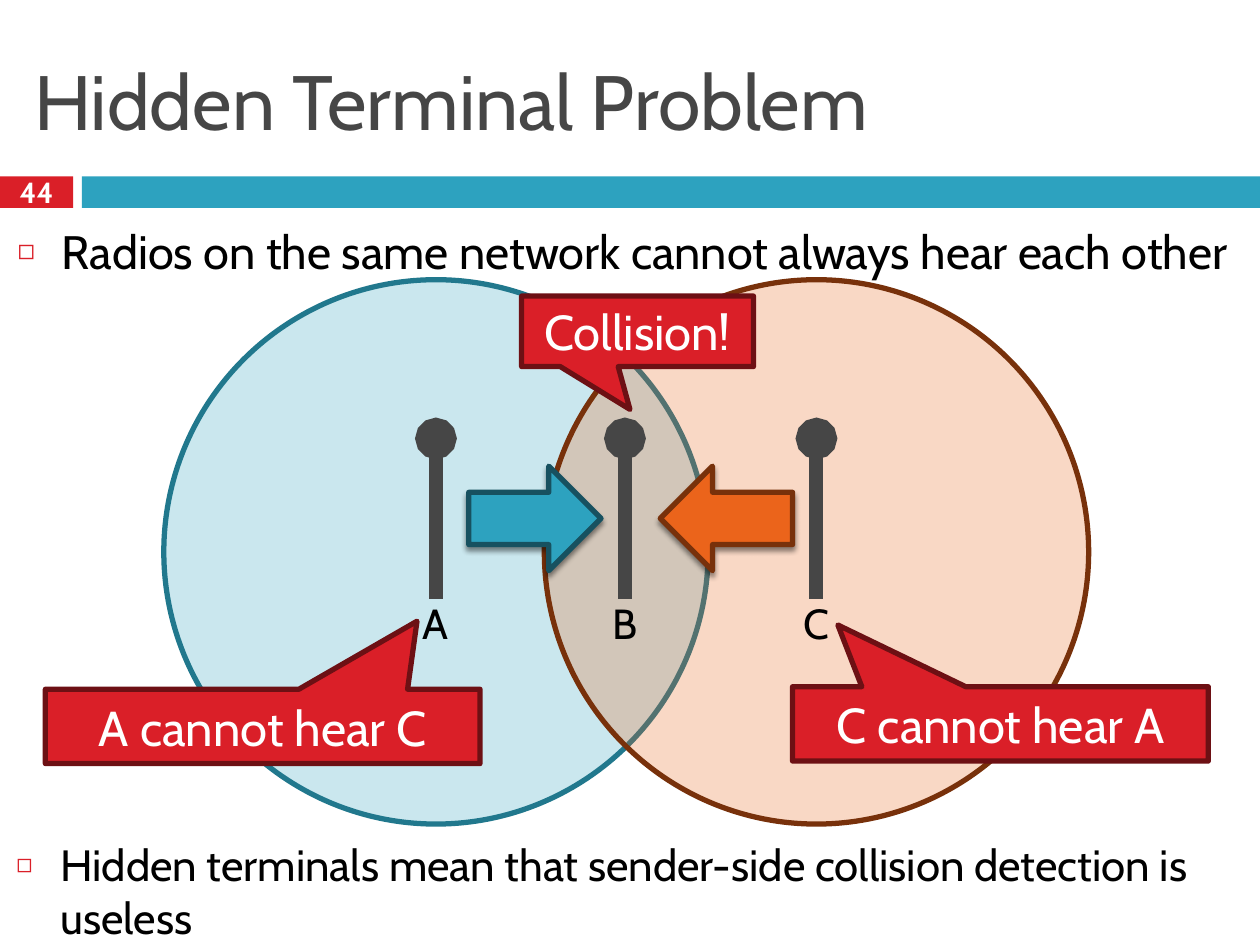
from lxml.etree import SubElement
from pptx import Presentation
from pptx.dml.color import RGBColor
from pptx.enum.shapes import MSO_CONNECTOR, MSO_SHAPE
from pptx.enum.text import MSO_ANCHOR, MSO_AUTO_SIZE, PP_ALIGN
from pptx.oxml.ns import qn
from pptx.util import Inches, Pt

FONT = "Cabin"
HUES = {
    "red": "DA1F28", "maroon": "6D1014", "teal": "2DA2BF", "sea": "21788D",
    "deep": "175160", "orange": "EB641B", "brown": "78310B",
    "gray": "464646", "black": "000000", "white": "FFFFFF",
}


def rgb(hue):
    return RGBColor.from_string(HUES[hue])


def node(parent, tag, **attrs):
    return SubElement(parent, qn(tag), {k: str(v) for k, v in attrs.items()})


def place(item, box):
    item.left, item.top, item.width, item.height = map(Inches, box)


def write(item, text, size=28, hue="white", bold=False,
          align=PP_ALIGN.CENTER, anchor=MSO_ANCHOR.MIDDLE, wrap=True):
    frame = item.text_frame
    frame.auto_size = MSO_AUTO_SIZE.NONE
    frame.word_wrap = wrap
    frame.vertical_anchor = anchor
    para = frame.paragraphs[0]
    para.alignment = align
    run = para.add_run()
    run.text = text
    font = run.font
    font.name, font.size, font.bold = FONT, Pt(size), bold
    font.color.rgb = rgb(hue)
    return para


def draw(slide, kind, box, fill, edge=None, alpha=None):
    item = slide.shapes.add_shape(kind, *map(Inches, box))
    item.shadow.inherit = False
    item.fill.solid()
    item.fill.fore_color.rgb = rgb(fill)
    if alpha:
        tint = item._element.spPr.find(qn("a:solidFill"))[0]
        node(tint, "a:alpha", val=alpha * 1000)
    if edge:
        item.line.color.rgb = rgb(edge)
        item.line.width = Pt(3)
    else:
        item.line.fill.background()
    return item


def header(slide, box, title, number):
    left, top, width, height = box
    tab, gap = 0.58, 0.07
    page = draw(slide, MSO_SHAPE.RECTANGLE, (left, top, tab, height), "red")
    page.text_frame.margin_top = page.text_frame.margin_bottom = 0
    write(page, number, size=16.6, bold=True)
    draw(slide, MSO_SHAPE.RECTANGLE,
         (left + tab + gap, top, width - tab - gap, height), "teal")
    head = slide.shapes.title
    place(head, (0.17, 0.25, 9.67, 1.08))
    write(head, title, size=44, hue="gray", align=PP_ALIGN.LEFT)


def bullet(holder, box, text, size):
    place(holder, box)
    para = write(holder, text, size=size, hue="black",
                 align=PP_ALIGN.LEFT, anchor=MSO_ANCHOR.TOP)
    para.space_before = Pt(7)
    props = para._p.get_or_add_pPr()
    props.set("marL", str(Inches(0.35)))
    props.set("indent", str(-Inches(0.35)))
    node(node(props, "a:buClr"), "a:srgbClr", val=HUES["red"])
    node(props, "a:buSzPct", val=60000)
    node(props, "a:buChar", char="◻")


def radio(slide, box, name):
    left, top, width, height = box
    mid = Inches(left + width / 2)
    mast = slide.shapes.add_connector(
        MSO_CONNECTOR.STRAIGHT, mid, Inches(top), mid, Inches(top + height))
    mast.line.color.rgb = rgb("gray")
    mast.line.width = Pt(8)
    node(mast.line._get_or_add_ln(), "a:headEnd", type="oval")
    node(mast._element.spPr, "a:effectLst")
    label = slide.shapes.add_textbox(
        *map(Inches, (left, top + height - 0.06, width, 0.5)))
    write(label, name, size=24, hue="black", anchor=MSO_ANCHOR.TOP, wrap=False)


def signal(slide, kind, box, fill, edge):
    arrow = draw(slide, kind, box, fill, edge)
    glow = node(arrow._element.spPr.find(qn("a:effectLst")), "a:outerShdw",
                blurRad=Pt(3), dist=Pt(2.4), dir=5400000, rotWithShape=0)
    node(node(glow, "a:srgbClr", val=HUES["black"]), "a:alpha", val=45000)


def callout(slide, box, text, tip):
    """Draw a callout whose point lies at tip, in inches."""
    left, top, width, height = box
    item = draw(slide, MSO_SHAPE.RECTANGULAR_CALLOUT, box, "red", "maroon")
    item.adjustments[0] = (tip[0] - left) / width - 0.5
    item.adjustments[1] = (tip[1] - top) / height - 0.5
    write(item, text)


def diagram(slide, box):
    left, top, width, size = box
    # Radio ranges
    for x, fill, edge in ((left, "teal", "sea"),
                          (left + width - size, "orange", "brown")):
        draw(slide, MSO_SHAPE.OVAL, (x, top, size, size), fill, edge, alpha=25)
    # Radios: A and C at the centres of their ranges
    mids = (left + size / 2, 4.96, left + width - size / 2)
    for name, mid in zip("ABC", mids):
        radio(slide, (mid - 0.2, top + 1.26, 0.4, 1.27), name)
    # Signals towards B
    for kind, x, fill, edge in (
            (MSO_SHAPE.RIGHT_ARROW, 3.72, "teal", "deep"),
            (MSO_SHAPE.LEFT_ARROW, 5.24, "orange", "brown")):
        signal(slide, kind, (x, top + 1.48, 1.05, 0.83), fill, edge)
    # Remarks
    callout(slide, (4.14, 2.35, 1.84, 0.56), "Collision!", (5, 3.25))
    callout(slide, (0.36, 5.47, 3.45, 0.59), "A cannot hear C", (3.31, 4.93))
    callout(slide, (6.29, 5.45, 3.3, 0.59), "C cannot hear A", (6.65, 4.96))


def main():
    deck = Presentation()
    deck.slide_width, deck.slide_height = Inches(10), Inches(7.5)
    slide = deck.slides.add_slide(deck.slide_layouts.get_by_name("Two Content"))
    header(slide, (0, 1.4, 10, 0.25), "Hidden Terminal Problem", "44")
    diagram(slide, (1.3, 2.22, 7.34, 4.32))
    # Points above and below the diagram
    bullet(slide.placeholders[1], (0.04, 1.72, 9.83, 0.66),
           "Radios on the same network cannot always hear each other", 26.8)
    bullet(slide.placeholders[2], (0.03, 6.6, 9.83, 0.66),
           "Hidden terminals mean that sender-side collision detection "
           "is useless", 25)
    deck.save("out.pptx")


if __name__ == "__main__":
    main()
